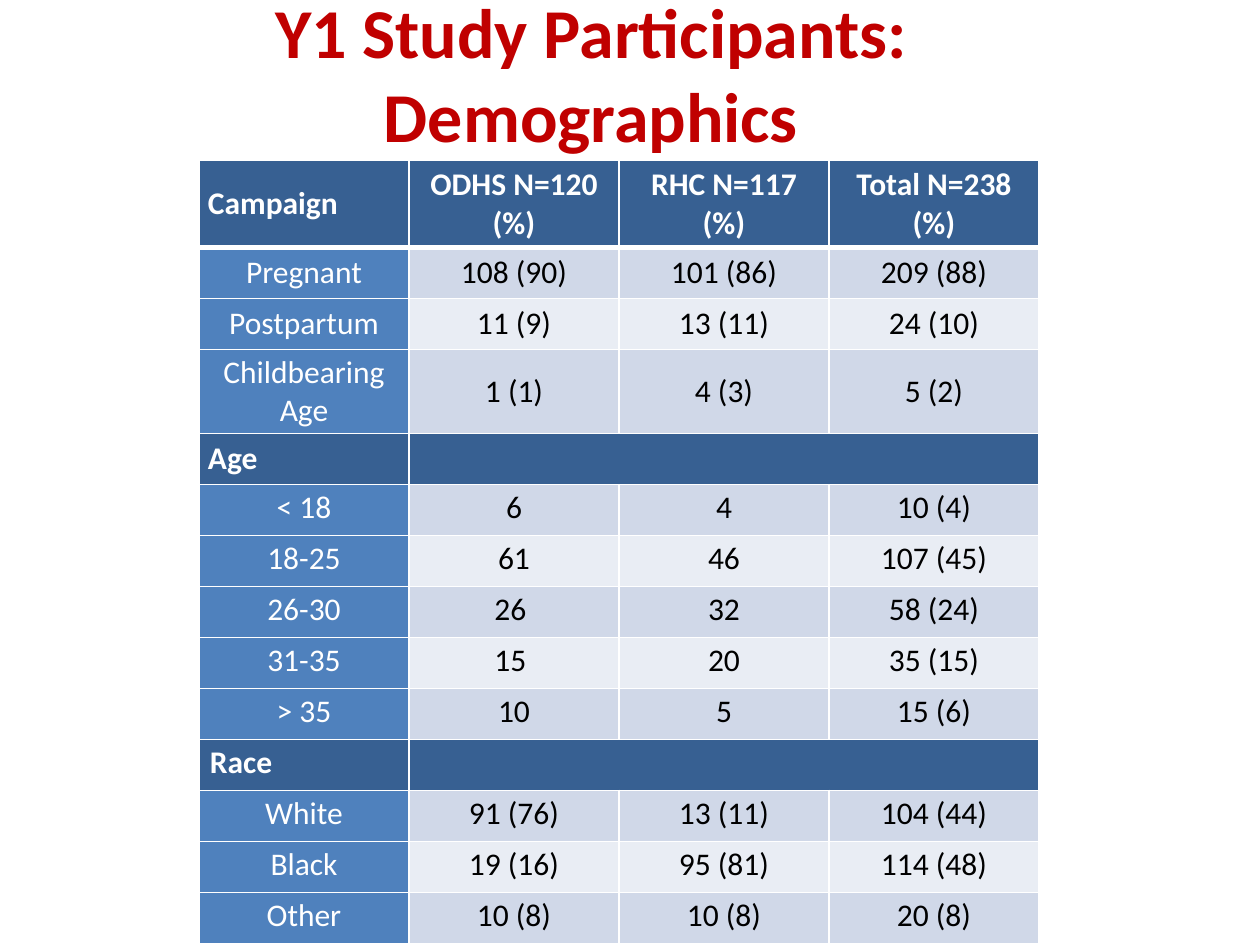
from lxml.etree import SubElement
from pptx import Presentation
from pptx.dml.color import RGBColor
from pptx.enum.text import MSO_ANCHOR, MSO_AUTO_SIZE, PP_ALIGN
from pptx.oxml.ns import qn
from pptx.util import Emu, Pt

NAVY, BLUE, WHITE, BLACK, RED = "376092", "4F81BD", "FFFFFF", "000000", "C00000"
BANDS = ["D0D8E8", "E9EDF4"]
ROW, TALL, HEAD = 51, 84, 87
GROUPS = [
    (["Campaign", "ODHS N=120\n(%)", "RHC N=117\n(%)", "Total N=238 (%)"], [
        ["Pregnant", "108 (90)", "101 (86)", "209 (88)"],
        ["Postpartum", "11 (9)", "13 (11)", "24 (10)"],
        ["Childbearing Age", "1 (1)", "4 (3)", "5 (2)"]]),
    (["Age"], [
        ["< 18", "6", "4", "10 (4)"],
        ["18-25", "61", "46", "107 (45)"],
        ["26-30", "26 ", "32", "58 (24)"],
        ["31-35", "15 ", "20", "35 (15)"],
        ["> 35", "10", "5", "15 (6)"]]),
    (["Race"], [
        ["White", "91 (76)", "13 (11)", "104 (44)"],
        ["Black", "19 (16)", "95 (81)", "114 (48)"],
        ["Other", "10 (8)", "10 (8)", "20 (8)"]]),
]


def px(n):
    return Emu(round(n * 914400 / 126))


def rgb(code):
    return RGBColor.from_string(code)


def style(frame, size, color, bold, align):
    for para in frame.paragraphs:
        para.alignment = align
        for run in para.runs:
            font = run.font
            font.name, font.size, font.bold = "Calibri", Pt(size), bold
            font.color.rgb = rgb(color)


def border(cell, base):
    """Draw white cell edges; base is the width of the lower one in points."""
    props = cell._tc.get_or_add_tcPr()
    for i, (tag, width) in enumerate([("lnL", 1), ("lnR", 1), ("lnT", 1), ("lnB", base)]):
        line = props.makeelement(qn(f"a:{tag}"), {"w": str(Pt(width))})
        fill = SubElement(line, qn("a:solidFill"))
        SubElement(fill, qn("a:srgbClr"), val=WHITE)
        props.insert(i, line)


def paint(cell, fill, base=1):
    cell.fill.solid()
    cell.fill.fore_color.rgb = rgb(fill)
    border(cell, base)


def write(cell, text, row, color, bold, align):
    cell.text_frame.text = text
    style(cell.text_frame, 18, color, bold, align)
    cell.vertical_anchor = MSO_ANCHOR.MIDDLE if row < 5 else MSO_ANCHOR.TOP
    side, edge = (9, 6) if row in (0, 1, 4) else (11, 4)
    cell.margin_left = cell.margin_right = px(side)
    cell.margin_top = cell.margin_bottom = px(edge)


def add_title(slide, x, y, w, h):
    title = slide.shapes.title
    title.left, title.top, title.width, title.height = map(px, (x, y, w, h))
    frame = title.text_frame
    frame.text = "Y1 Study Participants:\vDemographics"
    frame.word_wrap = True
    frame.auto_size = MSO_AUTO_SIZE.SHAPE_TO_FIT_TEXT
    frame.vertical_anchor = MSO_ANCHOR.MIDDLE
    style(frame, 40, RED, True, PP_ALIGN.CENTER)


def head_row(table, row, texts):
    for col in range(4):
        paint(table.cell(row, col), NAVY, 1 if row else 3)
    if len(texts) == 1:
        table.cell(row, 1).merge(table.cell(row, 3))
    for col, text in enumerate(texts):
        align = PP_ALIGN.CENTER if col else PP_ALIGN.LEFT
        write(table.cell(row, col), text, row, WHITE, True, align)


def body_row(table, row, texts, band):
    for col, text in enumerate(texts):
        cell = table.cell(row, col)
        paint(cell, band if col else BLUE)
        write(cell, text, row, BLACK if col else WHITE, False, PP_ALIGN.CENTER)


def add_grid(slide, x, y, w):
    count = sum(1 + len(rows) for _, rows in GROUPS)
    high = HEAD + TALL + ROW * (count - 2)
    table = slide.shapes.add_table(count, 4, px(x), px(y), px(w), px(high)).table
    for row in table.rows:
        row.height = px(ROW)
    table.rows[0].height = px(HEAD)
    table.rows[3].height = px(TALL)
    row = 0
    for head, rows in GROUPS:
        head_row(table, row, head)
        for i, texts in enumerate(rows):
            body_row(table, row + 1 + i, texts, BANDS[i % 2])
        row += 1 + len(rows)


def main():
    deck = Presentation()
    deck.slide_width, deck.slide_height = px(1260), px(945)
    slide = deck.slides.add_slide(deck.slide_layouts[5])
    add_title(slide, 53, -19, 1076, 183)
    add_grid(slide, 199, 160, 840)
    deck.save("out.pptx")


if __name__ == "__main__":
    main()
